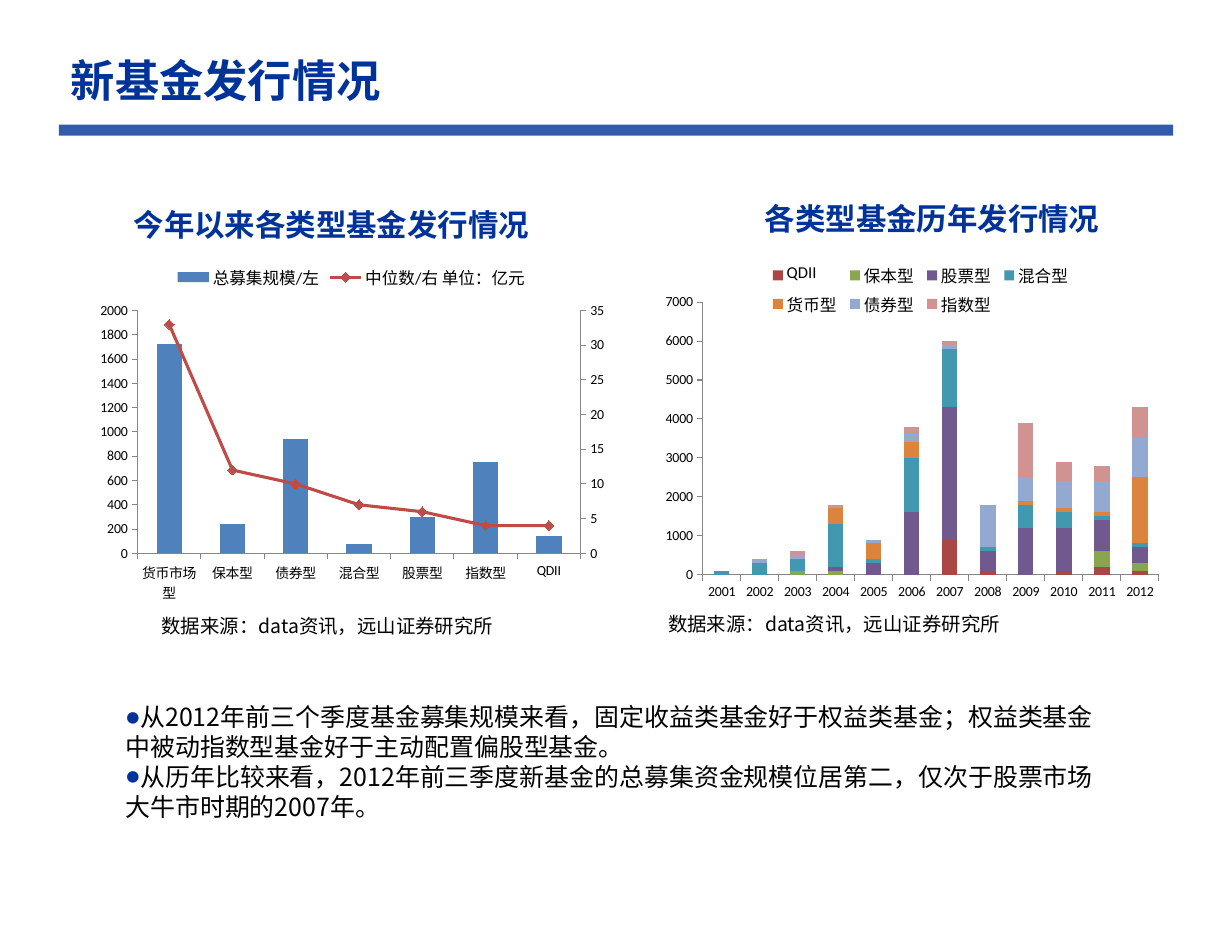
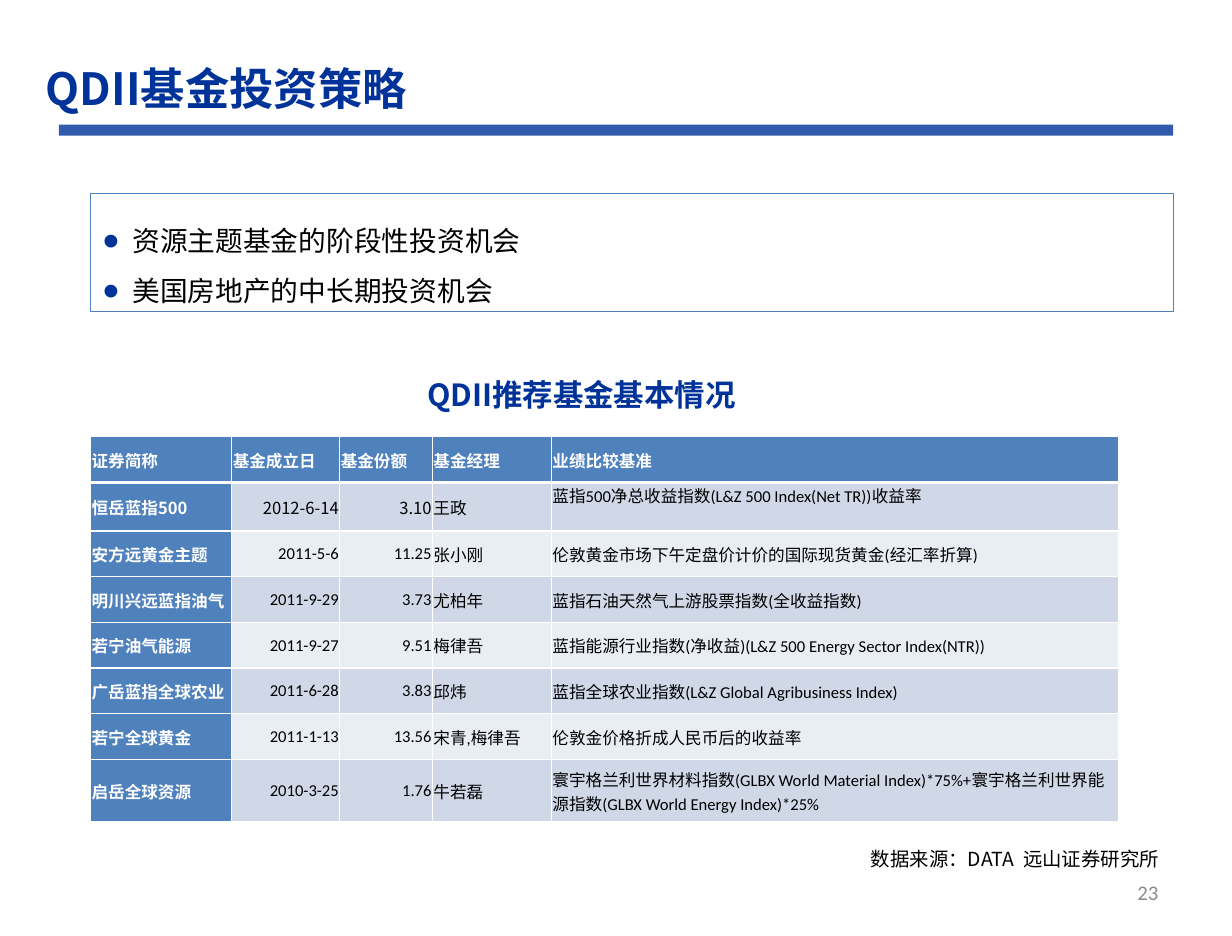
from copy import deepcopy
from dataclasses import dataclass

from lxml.etree import SubElement
from pptx import Presentation
from pptx.chart.data import CategoryChartData
from pptx.dml.color import RGBColor
from pptx.enum.chart import XL_CHART_TYPE, XL_LEGEND_POSITION, XL_MARKER_STYLE, XL_TICK_MARK
from pptx.enum.shapes import MSO_CONNECTOR
from pptx.enum.text import MSO_ANCHOR, MSO_AUTO_SIZE, PP_ALIGN
from pptx.oxml import parse_xml
from pptx.oxml.ns import nsdecls, qn
from pptx.util import Pt

NAVY, BLACK, WHITE, GRAY, AXIS = "003399", "000000", "FFFFFF", "8C8C8C", "868686"
BLUE, RED, BAND_DARK, BAND_LIGHT = "4F81BD", "BE4B48", "D0D8E8", "E9EDF4"
CJK, LATIN = "Noto Sans CJK SC", "Calibri"


@dataclass(frozen=True)
class Box:
    left: float
    top: float
    width: float
    height: float

    def lengths(self) -> tuple:
        return Pt(self.left), Pt(self.top), Pt(self.width), Pt(self.height)


@dataclass(frozen=True)
class Caption:
    text: str
    box: Box


@dataclass(frozen=True)
class Series:
    name: str
    values: tuple
    color: str


@dataclass(frozen=True)
class Fund:
    name: str
    founded: str
    shares: str
    manager: str
    benchmark: str

    def cells(self) -> tuple:
        return self.name, self.founded, self.shares, self.manager, self.benchmark


FUND_TYPES = ("货币市场型", "保本型", "债券型", "混合型", "股票型", "指数型", "QDII")
THIS_YEAR = (
    Series("总募集规模/左", (1720, 240, 940, 80, 300, 750, 140), BLUE),
    Series("中位数/右 单位：亿元", (33, 12, 10, 7, 6, 4, 4), RED),
)
YEARS = tuple(str(year) for year in range(2001, 2013))
NA = None
HISTORY = (
    Series("QDII", (NA, NA, NA, NA, NA, NA, 900, 100, NA, 100, 200, 100), "AA4643"),
    Series("保本型", (NA, NA, 100, 100, NA, NA, NA, NA, NA, NA, 400, 200), "89A54E"),
    Series("股票型", (NA, 0, 0, 100, 300, 1600, 3400, 500, 1200, 1100, 800, 400), "71588F"),
    Series("混合型", (100, 300, 300, 1100, 100, 1400, 1500, 100, 600, 400, 100, 100), "4198AF"),
    Series("货币型", (NA, NA, 0, 400, 400, 400, 0, NA, 100, 100, 100, 1700), "DB843D"),
    Series("债券型", (NA, 100, 100, 0, 100, 200, 100, 1100, 600, 700, 800, 1000), "93A9CF"),
    Series("指数型", (NA, 0, 100, 100, 0, 200, 100, 0, 1400, 500, 400, 800), "D19392"),
)
HEADINGS = ("证券简称", "基金成立日", "基金份额", "基金经理", "业绩比较基准")
FUNDS = (
    Fund("恒岳蓝指500", "2012-6-14", "3.10", "王政", "蓝指500净总收益指数(L&Z 500 Index(Net TR))收益率"),
    Fund("安方远黄金主题", "2011-5-6", "11.25", "张小刚", "伦敦黄金市场下午定盘价计价的国际现货黄金(经汇率折算)"),
    Fund("明川兴远蓝指油气", "2011-9-29", "3.73", "尤柏年", "蓝指石油天然气上游股票指数(全收益指数)"),
    Fund("若宁油气能源", "2011-9-27", "9.51", "梅律吾", "蓝指能源行业指数(净收益)(L&Z 500 Energy Sector Index(NTR))"),
    Fund("广岳蓝指全球农业", "2011-6-28", "3.83", "邱炜", "蓝指全球农业指数(L&Z Global Agribusiness Index)"),
    Fund("若宁全球黄金", "2011-1-13", "13.56", "宋青,梅律吾", "伦敦金价格折成人民币后的收益率"),
    Fund("启岳全球资源", "2010-3-25", "1.76", "牛若磊",
         "寰宇格兰利世界材料指数(GLBX World Material Index)*75%+寰宇格兰利世界能源指数(GLBX World Energy Index)*25%"),
)
COLUMN_WIDTHS = (102, 78, 67, 86, 410)
ROW_HEIGHTS = (33, 35, 33, 33, 33, 33, 33, 45)


def rgb(value: str) -> RGBColor:
    return RGBColor.from_string(value)


def write(frame, *lines: str, size: float, color: str = BLACK, font: str = CJK,
          bold: bool = False, align=PP_ALIGN.LEFT, spacing=1.0, anchor=MSO_ANCHOR.TOP,
          margins: tuple = (8.6, 4.3, 8.6, 4.3), bullet_indent: float | None = None) -> None:
    frame.word_wrap = True
    frame.auto_size = MSO_AUTO_SIZE.NONE
    frame.vertical_anchor = anchor
    frame.margin_left, frame.margin_top, frame.margin_right, frame.margin_bottom = map(Pt, margins)
    for index, line in enumerate(lines):
        paragraph = frame.add_paragraph() if index else frame.paragraphs[0]
        paragraph.alignment = align
        paragraph.line_spacing = spacing
        paragraph.space_before = paragraph.space_after = Pt(0)
        run = paragraph.add_run()
        run.text = line
        run.font.size, run.font.bold, run.font.name = Pt(size), bold, font
        run.font.color.rgb = rgb(color)
        SubElement(run.font._element, qn("a:ea"), typeface=CJK)
        if bullet_indent is not None:
            add_bullet(paragraph, bullet_indent)


def add_bullet(paragraph, indent: float) -> None:
    properties = paragraph._p.get_or_add_pPr()
    properties.set("marL", str(Pt(indent)))
    properties.set("indent", str(-Pt(indent)))
    SubElement(SubElement(properties, qn("a:buClr")), qn("a:srgbClr"), val=NAVY)
    SubElement(properties, qn("a:buFont"), typeface=LATIN)
    SubElement(properties, qn("a:buChar"), char="●")


def place(shape, box: Box) -> None:
    shape.left, shape.top, shape.width, shape.height = box.lengths()


def add_caption(slide, caption: Caption, **text_format) -> None:
    textbox = slide.shapes.add_textbox(*caption.box.lengths())
    write(textbox.text_frame, caption.text, **text_format)


def add_heading(slide, caption: Caption, align=PP_ALIGN.LEFT) -> None:
    add_caption(slide, caption, size=22, color=NAVY, bold=True, spacing=0.9, align=align)


def add_source(slide, caption: Caption) -> None:
    add_caption(slide, caption, size=14, spacing=0.82)


def start_slide(prs, title: str, title_box: Box):
    slide = prs.slides.add_slide(prs.slide_layouts[1])
    place(slide.shapes.title, title_box)
    write(slide.shapes.title.text_frame, title, size=32, color=NAVY, bold=True, anchor=MSO_ANCHOR.MIDDLE)
    return slide


def add_master_rule(prs, slide) -> None:
    rule = slide.shapes.add_connector(MSO_CONNECTOR.STRAIGHT, Pt(42.5), Pt(94), Pt(847.5), Pt(94))
    rule.line.width = Pt(8)
    rule.line.color.rgb = rgb(NAVY)
    properties = rule.element.spPr
    SubElement(next(properties.iter(qn("a:srgbClr"))), qn("a:alpha"), val="80000")
    SubElement(properties, qn("a:effectLst"))
    prs.slide_master.shapes.element.append(rule.element)


def set_layout(parent, position: int, fractions: tuple, inner: bool) -> None:
    for previous in parent.findall(qn("c:layout")):
        parent.remove(previous)
    target = '<c:layoutTarget val="inner"/>' if inner else ""
    modes = "".join(f'<c:{axis}Mode val="edge"/>' for axis in "xy")
    sizes = "".join(f'<c:{key} val="{value}"/>' for key, value in zip("xywh", fractions))
    parent.insert(position, parse_xml(
        f'<c:layout {nsdecls("c")}><c:manualLayout>{target}{modes}{sizes}</c:manualLayout></c:layout>'))


def add_columns(slide, box: Box, kind, categories: tuple, series: tuple, top_value: float,
                step: float, plot_area: tuple):
    data = CategoryChartData()
    data.categories = categories
    for item in series:
        data.add_series(item.name, item.values)
    chart = slide.shapes.add_chart(kind, *box.lengths(), data).chart
    chart.has_title = False
    chart.font.size, chart.font.name = Pt(10), LATIN
    chart.font.color.rgb = rgb(BLACK)
    chart.has_legend = True
    chart.legend.position = XL_LEGEND_POSITION.TOP
    chart.legend.include_in_layout = False
    chart.legend.font.size = Pt(12)
    columns = chart.plots[0]
    columns.gap_width = 150
    columns.vary_by_categories = False
    for drawn, item in zip(columns.series, series):
        drawn.format.fill.solid()
        drawn.format.fill.fore_color.rgb = rgb(item.color)
    for axis in (chart.category_axis, chart.value_axis):
        axis.has_major_gridlines = False
        axis.major_tick_mark = XL_TICK_MARK.OUTSIDE
        axis.format.line.color.rgb = rgb(AXIS)
    chart.value_axis.minimum_scale = 0
    chart.value_axis.maximum_scale = top_value
    chart.value_axis.major_unit = step
    set_layout(chart._chartSpace.chart.plotArea, 0, plot_area, True)
    return chart


def move_last_series_to_right_axis(chart, color: str, top_value: float, step: float) -> None:
    plot_area = chart._chartSpace.chart.plotArea
    columns = plot_area.find(qn("c:barChart"))
    median = columns.findall(qn("c:ser"))[-1]
    for tag in ("c:invertIfNegative", "c:spPr"):
        for unwanted in median.findall(qn(tag)):
            median.remove(unwanted)
    line_chart = parse_xml(
        f'<c:lineChart {nsdecls("c")}><c:grouping val="standard"/><c:varyColors val="0"/>'
        '<c:marker val="1"/><c:axId val="5001"/><c:axId val="5002"/></c:lineChart>')
    line_chart.insert(2, median)
    columns.addnext(line_chart)

    left_axis = plot_area.find(qn("c:valAx"))
    right_axis = deepcopy(left_axis)
    hidden_axis = deepcopy(plot_area.find(qn("c:catAx")))
    for axis, own_id, other_id in ((right_axis, "5002", "5001"), (hidden_axis, "5001", "5002")):
        axis.find(qn("c:axId")).set("val", own_id)
        axis.find(qn("c:crossAx")).set("val", other_id)
    hidden_axis.find(qn("c:delete")).set("val", "1")
    for tag, value in (("c:axPos", "r"), ("c:crosses", "max"), ("c:majorUnit", str(step)),
                       ("c:max", str(top_value))):
        next(right_axis.iter(qn(tag))).set("val", value)
    left_axis.addnext(right_axis)
    right_axis.addnext(hidden_axis)

    line = chart.plots[1].series[0]
    line.smooth = False
    line.format.line.width = Pt(2.25)
    line.format.line.color.rgb = rgb(color)
    line.marker.style = XL_MARKER_STYLE.DIAMOND
    line.marker.size = 7
    line.marker.format.fill.solid()
    line.marker.format.fill.fore_color.rgb = rgb(color)
    line.marker.format.line.color.rgb = rgb(color)


def style_cell(cell, fill: str, bottom_width: float) -> None:
    cell.fill.solid()
    cell.fill.fore_color.rgb = rgb(fill)
    properties = cell._tc.get_or_add_tcPr()
    for index, side in enumerate(("lnL", "lnR", "lnT", "lnB")):
        width = Pt(bottom_width if side == "lnB" else 1)
        properties.insert(index, parse_xml(
            f'<a:{side} {nsdecls("a")} w="{width}"><a:solidFill><a:srgbClr val="{WHITE}"/>'
            f'</a:solidFill></a:{side}>'))


def add_fund_table(slide, box: Box) -> None:
    rows = (HEADINGS, *(fund.cells() for fund in FUNDS))
    table = slide.shapes.add_table(len(rows), len(HEADINGS), *box.lengths()).table
    for column, width in zip(table.columns, COLUMN_WIDTHS):
        column.width = Pt(width)
    for row_index, texts in enumerate(rows):
        table.rows[row_index].height = Pt(ROW_HEIGHTS[row_index])
        band = BAND_DARK if row_index % 2 else BAND_LIGHT
        for column_index, text in enumerate(texts):
            cell = table.cell(row_index, column_index)
            header = row_index == 0 or column_index == 0
            first_fund = row_index == 1
            style_cell(cell, BLUE if header else band, 1 if row_index else 3)
            write(cell.text_frame, text, size=12, bold=header, color=WHITE if header else BLACK,
                  font=CJK if first_fund and column_index < 4 else LATIN,
                  align=PP_ALIGN.RIGHT if row_index and column_index in (1, 2) else PP_ALIGN.LEFT)
            cell.margin_left = cell.margin_top = cell.margin_right = Pt(0.7)
            cell.margin_bottom = Pt(0)
            cell.vertical_anchor = MSO_ANCHOR.TOP if first_fund and column_index == 4 else MSO_ANCHOR.MIDDLE


def build_issuance(prs) -> None:
    slide = start_slide(prs, "新基金发行情况", Box(42.5, 15, 801, 85))
    add_master_rule(prs, slide)
    add_heading(slide, Caption("今年以来各类型基金发行情况", Box(88, 147.5, 308, 36)))
    add_heading(slide, Caption("各类型基金历年发行情况", Box(544, 143.5, 264, 36)))
    for left, top in ((108, 442), (474, 440.5)):
        add_source(slide, Caption("数据来源：data资讯，远山证券研究所", Box(left, top, 258.5, 26)))
    findings = slide.placeholders[1]
    place(findings, Box(82, 502.5, 728, 114))
    write(findings.text_frame,
          "从2012年前三个季度基金募集规模来看，固定收益类基金好于权益类基金；权益类基金中被动指数型基金好于主动配置偏股型基金。",
          "从历年比较来看，2012年前三季度新基金的总募集资金规模位居第二，仅次于股票市场大牛市时期的2007年。",
          size=18, bullet_indent=0)
    this_year = add_columns(slide, Box(65.5, 183, 376.5, 258), XL_CHART_TYPE.COLUMN_CLUSTERED,
                            FUND_TYPES, THIS_YEAR, 2000, 200, (0.09, 0.16, 0.85, 0.68))
    move_last_series_to_right_axis(this_year, RED, 35, 5)
    history = add_columns(slide, Box(474, 182, 374.5, 259), XL_CHART_TYPE.COLUMN_STACKED,
                          YEARS, HISTORY, 7000, 1000, (0.09, 0.14, 0.88, 0.76))
    history.plots[0].overlap = 100
    set_layout(history.legend._element, 1, (0.21, 0.02, 0.6, 0.17), False)


def build_strategy(prs) -> None:
    slide = start_slide(prs, "QDII基金投资策略", Box(24.5, 21, 801, 85))
    opportunities = slide.placeholders[1]
    place(opportunities, Box(65.5, 139.5, 782, 85.5))
    opportunities.line.color.rgb = rgb(BLUE)
    opportunities.line.width = Pt(0.75)
    write(opportunities.text_frame, "资源主题基金的阶段性投资机会", "美国房地产的中长期投资机会",
          size=20, spacing=Pt(36), margins=(8.6, 10, 8.6, 3), bullet_indent=21.5)
    add_heading(slide, Caption("QDII推荐基金基本情况", Box(105, 270, 630, 34)), PP_ALIGN.CENTER)
    add_fund_table(slide, Box(65.5, 315.5, sum(COLUMN_WIDTHS), sum(ROW_HEIGHTS)))
    add_source(slide, Caption("数据来源：DATA  远山证券研究所", Box(620.5, 610.5, 230.5, 26)))
    add_caption(slide, Caption("23", Box(638, 626.5, 207.5, 36)), size=15, color=GRAY, font=LATIN,
                align=PP_ALIGN.RIGHT, anchor=MSO_ANCHOR.MIDDLE)


def main() -> None:
    prs = Presentation()
    prs.slide_width, prs.slide_height = Pt(890), Pt(676)
    build_issuance(prs)
    build_strategy(prs)
    prs.save("out.pptx")


if __name__ == "__main__":
    main()
